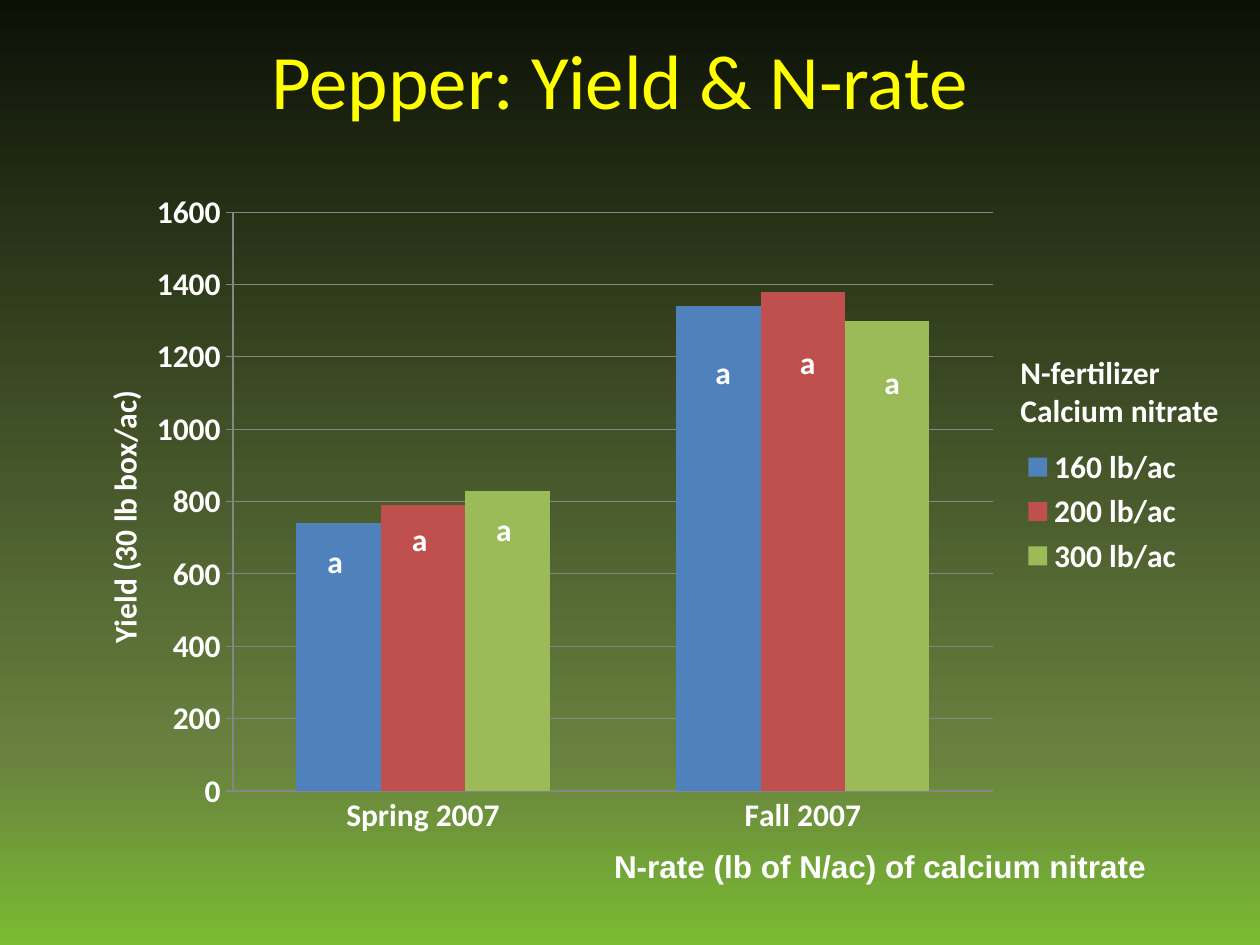
from copy import deepcopy

from lxml import etree
from pptx import Presentation, util as u
from pptx.chart.data import CategoryChartData
from pptx.dml.color import RGBColor
from pptx.enum import chart as ch, text as tx
from pptx.oxml.ns import qn

WIDE, HIGH = 10, 7.5
HEX = dict(title="FFFF00", text="FFFFFF", rule="868686",
           top="0C1107", mid="68813F", base="7ABC32")
YIELDS = {
    "160 lb/ac": ("4F81BD", (740, 1340)),
    "200 lb/ac": ("C0504D", (790, 1380)),
    "300 lb/ac": ("9BBB59", (830, 1300)),
}
BOLD = dict(name="Calibri", size=u.Pt(18), bold=True)


def rgb(key):
    return RGBColor.from_string(HEX.get(key, key))


def style(font, color="text", **form):
    for name, val in {**BOLD, **form}.items():
        setattr(font, name, val)
    font.color.rgb = rgb(color)


def inches(box):
    return [u.Inches(n) for n in box]


def paint(slide):
    fill = slide.background.fill
    fill.gradient()
    fill.gradient_angle = 270
    stops = slide.element.find(".//" + qn("a:gsLst"))
    stops.append(deepcopy(stops[-1]))
    for stop, (key, pos) in zip(fill.gradient_stops,
                                (("top", 0), ("mid", 0.8), ("base", 1))):
        stop.color.rgb = rgb(key)
        stop.position = pos


def head(slide, box, words):
    title = slide.shapes.title
    title.left, title.top, title.width, title.height = inches(box)
    frame = title.text_frame
    frame.text = words
    frame.vertical_anchor = tx.MSO_ANCHOR.MIDDLE
    para = frame.paragraphs[0]
    para.alignment = tx.PP_ALIGN.CENTER
    style(para.runs[0].font, "title", size=u.Pt(44), bold=False)


def label(slide, box, words, align=tx.PP_ALIGN.LEFT, **form):
    frame = slide.shapes.add_textbox(*inches(box)).text_frame
    frame.text = words
    frame.word_wrap = False
    frame.auto_size = tx.MSO_AUTO_SIZE.SHAPE_TO_FIT_TEXT
    for para in frame.paragraphs:
        para.alignment = align
        style(para.runs[0].font, **form)


def place(node, after, **spots):
    """Fix a chart part at shares of the chart's size."""
    for old in node.findall(qn("c:layout")):
        node.remove(old)
    lay = etree.Element(qn("c:layout"))
    man = etree.SubElement(lay, qn("c:manualLayout"))
    for tag, val in spots.items():
        etree.SubElement(man, qn("c:" + tag), val=str(val))
    if after is None:
        node.insert(0, lay)
    else:
        node.find(qn(after)).addnext(lay)


def bars(slide, box):
    data = CategoryChartData()
    data.categories = ["Spring 2007", "Fall 2007"]
    for name, (_, vals) in YIELDS.items():
        data.add_series(name, vals)
    chart = slide.shapes.add_chart(
        ch.XL_CHART_TYPE.COLUMN_CLUSTERED, *inches(box), data).chart
    style(chart.font)
    chart.has_title = False
    plot = chart.plots[0]
    plot.gap_width, plot.overlap, plot.vary_by_categories = 150, 0, False
    for ser, (color, _) in zip(plot.series, YIELDS.values()):
        ser.format.fill.solid()
        ser.format.fill.fore_color.rgb = rgb(color)

    cat, val = chart.category_axis, chart.value_axis
    cat.major_tick_mark = ch.XL_TICK_MARK.NONE
    val.major_tick_mark = ch.XL_TICK_MARK.OUTSIDE
    val.minimum_scale, val.maximum_scale, val.major_unit = 0, 1600, 200
    val.has_major_gridlines = True
    for part in (cat, val, val.major_gridlines):
        part.format.line.color.rgb = rgb("rule")
        part.format.line.width = u.Pt(0.75)
    for axis in (cat, val):
        style(axis.tick_labels.font)
    title = val.axis_title
    title.text_frame.text = "Yield (30 lb box/ac)"
    title.text_frame._txBody.bodyPr.set("rot", "-5400000")
    style(title.text_frame.paragraphs[0].runs[0].font)

    chart.has_legend = True
    chart.legend.position = ch.XL_LEGEND_POSITION.RIGHT
    chart.legend.include_in_layout = False
    style(chart.legend.font)
    area = chart.element.find(".//" + qn("c:plotArea"))
    place(area, None, layoutTarget="inner", xMode="edge", yMode="edge",
          x=0.15, y=0.05, w=0.67, h=0.87)
    place(title._element, "c:tx", xMode="edge", yMode="edge", x=0.03, y=0.31)


def marks(slide, left, tops, step=0.67):
    """Letter one season's group of bars."""
    for i, top in enumerate(tops):
        label(slide, (left + i * step, top, 0.33, 0.4), "a")


def main():
    prs = Presentation()
    prs.slide_width, prs.slide_height = inches((WIDE, HIGH))
    slide = prs.slides.add_slide(prs.slide_layouts[5])
    paint(slide)
    head(slide, (0.42, 0, 0.9 * WIDE, HIGH / 6), "Pepper: Yield & N-rate")
    bars(slide, (0.5, 1.42, 0.9 * WIDE, 5.28))
    label(slide, (0.8 * WIDE, 2.75, 1.79, 0.71),
          "N-fertilizer\nCalcium nitrate")
    marks(slide, 2.5, (4.25, 4.08, 4))
    marks(slide, 5.58, (2.75, 2.67, 2.83))
    label(slide, (4.75, 6.67, 4.47, 0.4),
          "N-rate (lb of N/ac) of calcium nitrate",
          tx.PP_ALIGN.CENTER, name="Arial")
    prs.save("out.pptx")


if __name__ == "__main__":
    main()
